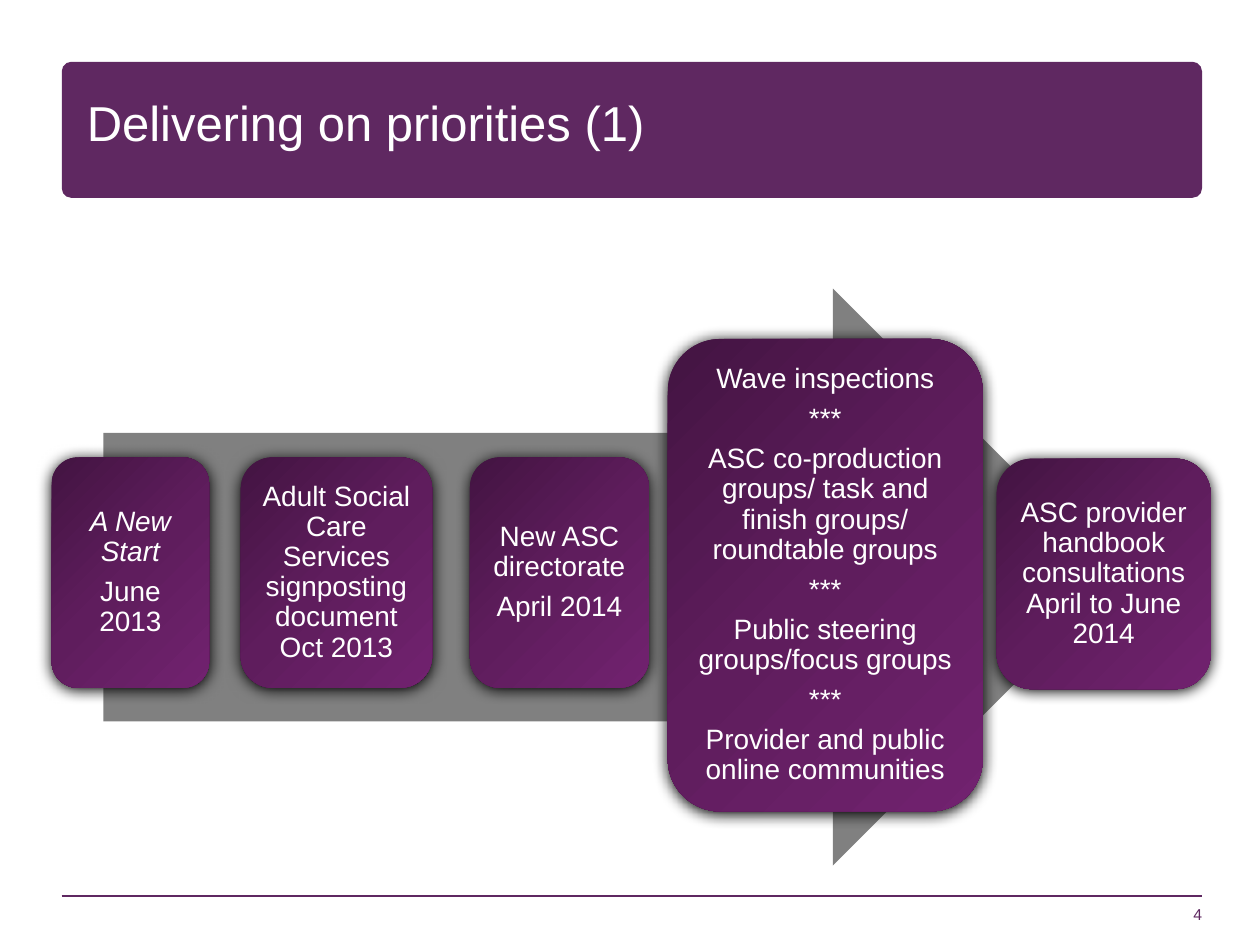
"""Build the 'Delivering on priorities' timeline slide."""
from dataclasses import dataclass
from typing import Any

import pptx
import pptx.dml.color
import pptx.enum.shapes
import pptx.enum.text
import pptx.oxml
import pptx.oxml.ns
import pptx.util

Inches = pptx.util.Inches
Pt = pptx.util.Pt
RGBColor = pptx.dml.color.RGBColor
Kind = pptx.enum.shapes.MSO_SHAPE
Align = pptx.enum.text.PP_ALIGN
Anchor = pptx.enum.text.MSO_ANCHOR

PLUM = RGBColor(0x5F, 0x28, 0x61)
WHITE = RGBColor(0xFF, 0xFF, 0xFF)
GREY = RGBColor(0x80, 0x80, 0x80)
DARK = RGBColor(0x43, 0x14, 0x42)
MID = RGBColor(0x5F, 0x1D, 0x5D)
LIGHT = RGBColor(0x71, 0x22, 0x6F)
BLACK = RGBColor(0, 0, 0)
STOPS = {0: DARK, 50: MID, 100: LIGHT}
SPACE = pptx.oxml.ns.nsdecls("a")

TITLE = {"size": Pt(28), "color": WHITE, "line_spacing": 0.85}
NUMBER = {"size": Pt(9), "color": PLUM, "alignment": Align.RIGHT}
STEP = {"size": Pt(16), "color": WHITE, "alignment": Align.CENTER,
        "line_spacing": 0.9, "space_after": Pt(5.6)}


@dataclass
class Box:
    """Place of an element, in inches."""
    left: float
    top: float
    width: float
    height: float

    def sides(self) -> list[int]:
        """Return the four lengths."""
        return [Inches(n) for n in (self.left, self.top, self.width, self.height)]


@dataclass
class Step:
    """One card on the arrow."""
    box: Box
    lines: list[str]
    slant: bool = False


STEPS = [
    Step(Box(0.41, 3.63, 1.25, 1.83), ["A New Start", "June 2013"], True),
    Step(Box(1.91, 3.63, 1.52, 1.83),
         ["Adult Social Care Services signposting document Oct 2013"]),
    Step(Box(3.73, 3.63, 1.42, 1.83), ["New ASC directorate", "April 2014"]),
    Step(Box(5.3, 2.69, 2.5, 3.75),
         ["Wave inspections", "***",
          "ASC co-production groups/ task and finish groups/ roundtable groups",
          "***", "Public steering groups/focus groups", "***",
          "Provider and public online communities"]),
    Step(Box(7.91, 3.64, 1.7, 1.83),
         ["ASC provider handbook consultations April to June 2014"]),
]


def write(frame: Any, lines: list[str], style: dict[str, Any], inset: tuple[float, float],
          anchor: Any = Anchor.TOP) -> None:
    """Fill a text frame with styled paragraphs."""
    across, down = (Inches(n) for n in inset)
    setup = {"word_wrap": True, "vertical_anchor": anchor, "margin_left": across,
             "margin_right": across, "margin_top": down, "margin_bottom": down}
    for name, value in setup.items():
        setattr(frame, name, value)
    for rank, line in enumerate(lines):
        para = frame.add_paragraph() if rank else frame.paragraphs[0]
        font = para.add_run().font
        para.runs[0].text = line
        font.name = "Arial"
        for name, value in style.items():
            if name == "color":
                font.color.rgb = value
            else:
                setattr(font if name == "size" else para, name, value)


def block(slide: Any, kind: Any, box: Box, color: RGBColor | None = None) -> Any:
    """Draw a shape without outline or shadow."""
    shape = slide.shapes.add_shape(kind, *box.sides())
    shape.shadow.inherit = False
    shape.line.fill.background()
    if color is not None:
        shape.fill.solid()
        shape.fill.fore_color.rgb = color
    return shape


def card(slide: Any, step: Step) -> None:
    """Draw a card with gradient, shadow and text."""
    shape = block(slide, Kind.ROUNDED_RECTANGLE, step.box)
    props = shape._element.spPr
    stops = "".join(f'<a:gs pos="{pos * 1000}"><a:srgbClr val="{color}"/></a:gs>'
                    for pos, color in STOPS.items())
    fill = pptx.oxml.parse_xml(
        f'<a:gradFill {SPACE} rotWithShape="1"><a:gsLst>{stops}</a:gsLst>'
        f'<a:lin ang="{45 * 60000}" scaled="0"/></a:gradFill>')
    props.find(pptx.oxml.ns.qn("a:prstGeom")).addnext(fill)
    shade = pptx.oxml.parse_xml(
        f'<a:outerShdw {SPACE} blurRad="{Pt(8.5)}" dist="{Pt(1)}" dir="{90 * 60000}" '
        f'rotWithShape="0"><a:srgbClr val="{BLACK}"/></a:outerShdw>')
    props.find(pptx.oxml.ns.qn("a:effectLst")).append(shade)
    write(shape.text_frame, step.lines, STEP, (0.07, 0.07), Anchor.MIDDLE)
    if step.slant:
        shape.text_frame.paragraphs[0].runs[0].font.italic = True


def label(slide: Any, box: Box, line: str, style: dict[str, Any],
          inset: tuple[float, float], anchor: Any) -> None:
    """Add a text box."""
    frame = slide.shapes.add_textbox(*box.sides()).text_frame
    write(frame, [line], style, inset, anchor)


def rule(slide: Any, left: float, right: float, top: float) -> None:
    """Draw the footer line."""
    line = slide.shapes.add_connector(
        pptx.enum.shapes.MSO_CONNECTOR.STRAIGHT,
        Inches(left), Inches(top), Inches(right), Inches(top))
    line.line.color.rgb = PLUM
    line.line.width = Pt(1)
    line._element.spPr.append(pptx.oxml.parse_xml(f"<a:effectLst {SPACE}/>"))


def main() -> None:
    """Build and save the slide."""
    deck = pptx.Presentation()
    deck.slide_width, deck.slide_height = Inches(10), Inches(7.5)
    slide = deck.slides.add_slide(deck.slide_layouts[6])
    band = block(slide, Kind.ROUNDED_RECTANGLE, Box(0.49, 0.49, 9.05, 1.08), PLUM)
    band.adjustments[0] = 0.07
    rule(slide, 0.49, 9.54, 7.11)
    label(slide, Box(7.46, 6.83, 2.08, 0.5), "4", NUMBER, (0, 0), Anchor.BOTTOM)
    label(slide, Box(0.59, 0.76, 6.38, 0.63), "Delivering on priorities (1)",
          TITLE, (0.1, 0.05), Anchor.TOP)
    block(slide, Kind.RIGHT_ARROW, Box(0.82, 2.29, 8.08, 4.58), GREY)
    for step in STEPS:
        card(slide, step)
    deck.save("out.pptx")


if __name__ == "__main__":
    main()
